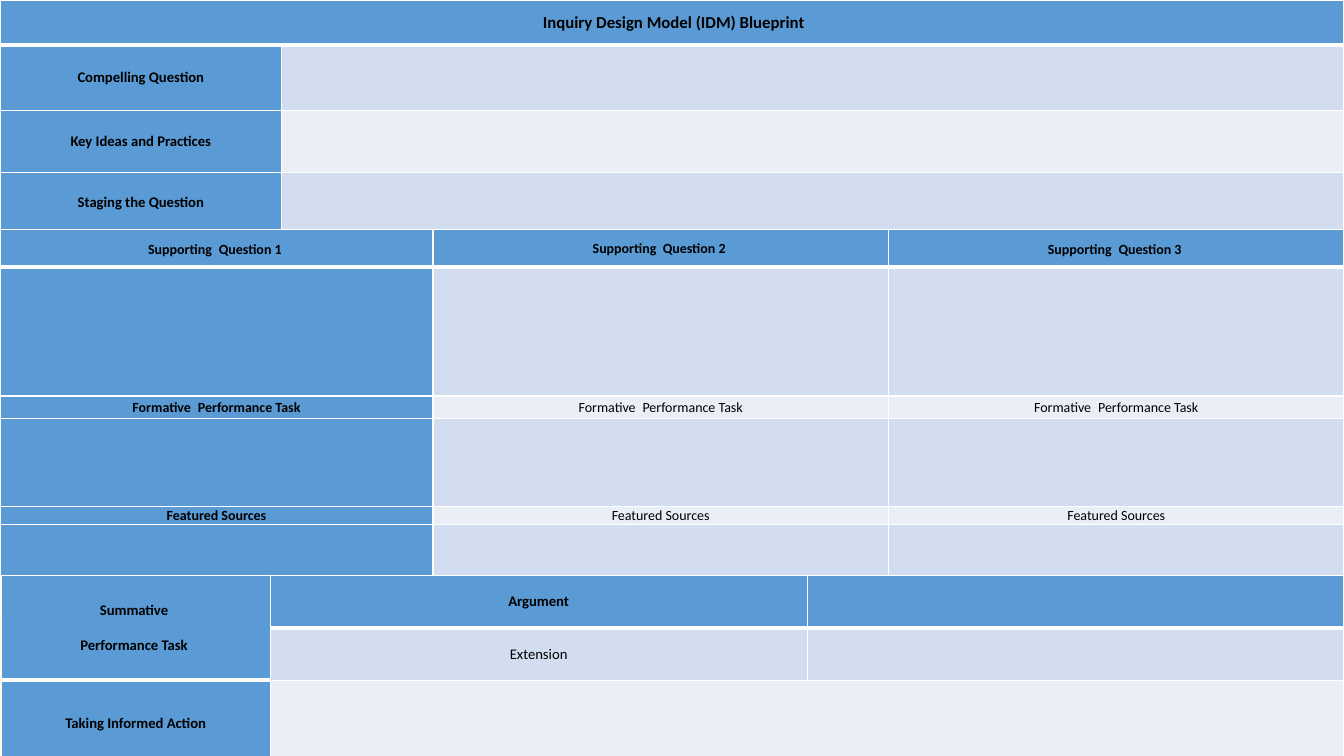
import pptx
import pptx.dml.color
import pptx.enum.text
import pptx.oxml
import pptx.oxml.ns
import pptx.util
from pptx.util import Cm, Pt

# Content: "|" parts a line into runs; a run that is only a space is set larger
TASK = "Formative | |Performance Task"
SOURCE = "Featured Sources"
BLANK = ["", "", ""]

# Lengths in cm; merge holds the first and last cell of a joined area
TABLES = [
    dict(
        at=(0, 0), cols=[7.1, 26.77], rows=[1.14, 1.65, 1.55, 1.55],
        size=10.5, head=12, merge=((0, 0), (0, 1)),
        text=[
            [" Inquiry Design Model (IDM) Blueprint", ""],
            ["Compelling Question", ""],
            ["Key Ideas and Practices", ""],
            ["Staging the Question", ""],
        ],
    ),
    dict(
        at=(0, 5.79), cols=[10.91, 11.48, 11.48],
        rows=[0.94, 3.25, 0.56, 2.23, 0.44, 2.23],
        size=10, head=10, merge=None,
        text=[
            ["Supporting | |Question 1 ", "Supporting  Question 2 ",
             "Supporting | |Question 3 "],
            BLANK,
            [TASK] * 3,
            BLANK,
            [SOURCE] * 3,
            BLANK,
        ],
    ),
    dict(
        at=(0.03, 14.5), cols=[6.78, 13.53, 13.53], rows=[1.32, 1.32, 2.16],
        size=10.5, head=10.5, merge=((0, 0), (1, 0)),
        text=[
            ["Summative \nPerformance Task ", "Argument", ""],
            ["", "Extension", ""],
            ["Taking Informed Action", "", ""],
        ],
    ),
]
FONT, GAP = "Calibri", 12
BACK, DARK, WHITE, BLACK = "FFFFCC", "5B9BD5", "FFFFFF", "000000"
BANDS = ["EAEFF7", "D2DEEF"]


def paint(fill, tone):
    fill.solid()
    fill.fore_color.rgb = pptx.dml.color.RGBColor.from_string(tone)


def edge(cell, side, width):
    line = pptx.oxml.parse_xml(
        f'<a:{side} {pptx.oxml.ns.nsdecls("a")} w="{Pt(width)}">'
        f'<a:solidFill><a:srgbClr val="{WHITE}"/></a:solidFill></a:{side}>')
    cell._tc.get_or_add_tcPr().append(line)


def write(cell, text, size, bold):
    frame = cell.text_frame
    frame.text = text.replace("|", "")
    for para, words in zip(frame.paragraphs, text.split("\n")):
        para.alignment = pptx.enum.text.PP_ALIGN.CENTER
        para.space_before = para.space_after = Pt(6)
        parts = words.split("|")
        para.runs[0].text = parts[0]
        for part in parts[1:]:
            para.add_run().text = part
        for run in para.runs:
            run.font.name = FONT
            run.font.size = Pt(GAP if run.text == " " else size)
            run.font.bold = bold
            paint(run.font.fill, BLACK)


def build(slide, spec):
    cols, rows = spec["cols"], spec["rows"]
    left, top = spec["at"]
    shape = slide.shapes.add_table(
        len(rows), len(cols), Cm(left), Cm(top), Cm(sum(cols)), Cm(sum(rows)))
    table = shape.table
    for col, width in zip(table.columns, cols):
        col.width = Cm(width)
    for row, height in zip(table.rows, rows):
        row.height = Cm(height)

    # Cells: dark head row and first column, banded body
    for r, line in enumerate(spec["text"]):
        for c, text in enumerate(line):
            cell = table.cell(r, c)
            cell.vertical_anchor = pptx.enum.text.MSO_ANCHOR.MIDDLE
            cell.margin_left = cell.margin_right = Cm(0.2)
            cell.margin_top = cell.margin_bottom = 0
            edge(cell, "lnL", 1)
            edge(cell, "lnR", 1)
            if r == 0:
                edge(cell, "lnT", 1)
            edge(cell, "lnB", 3 if r == 0 else 1)
            dark = r == 0 or c == 0
            paint(cell.fill, DARK if dark else BANDS[r % 2])
            if text:
                write(cell, text, spec["size" if r else "head"], dark)

    # Joined areas
    joins = [spec["merge"]] if spec["merge"] else []
    if len(cols) == 3 and spec["merge"]:
        joins.append(((len(rows) - 1, 1), (len(rows) - 1, 2)))
    for first, last in joins:
        table.cell(*first).merge(table.cell(*last))


def main():
    deck = pptx.Presentation()
    deck.slide_width, deck.slide_height = Cm(33.87), Cm(19.05)
    slide = deck.slides.add_slide(deck.slide_layouts[6])
    paint(slide.background.fill, BACK)
    for spec in TABLES:
        build(slide, spec)
    deck.save("out.pptx")


if __name__ == "__main__":
    main()
